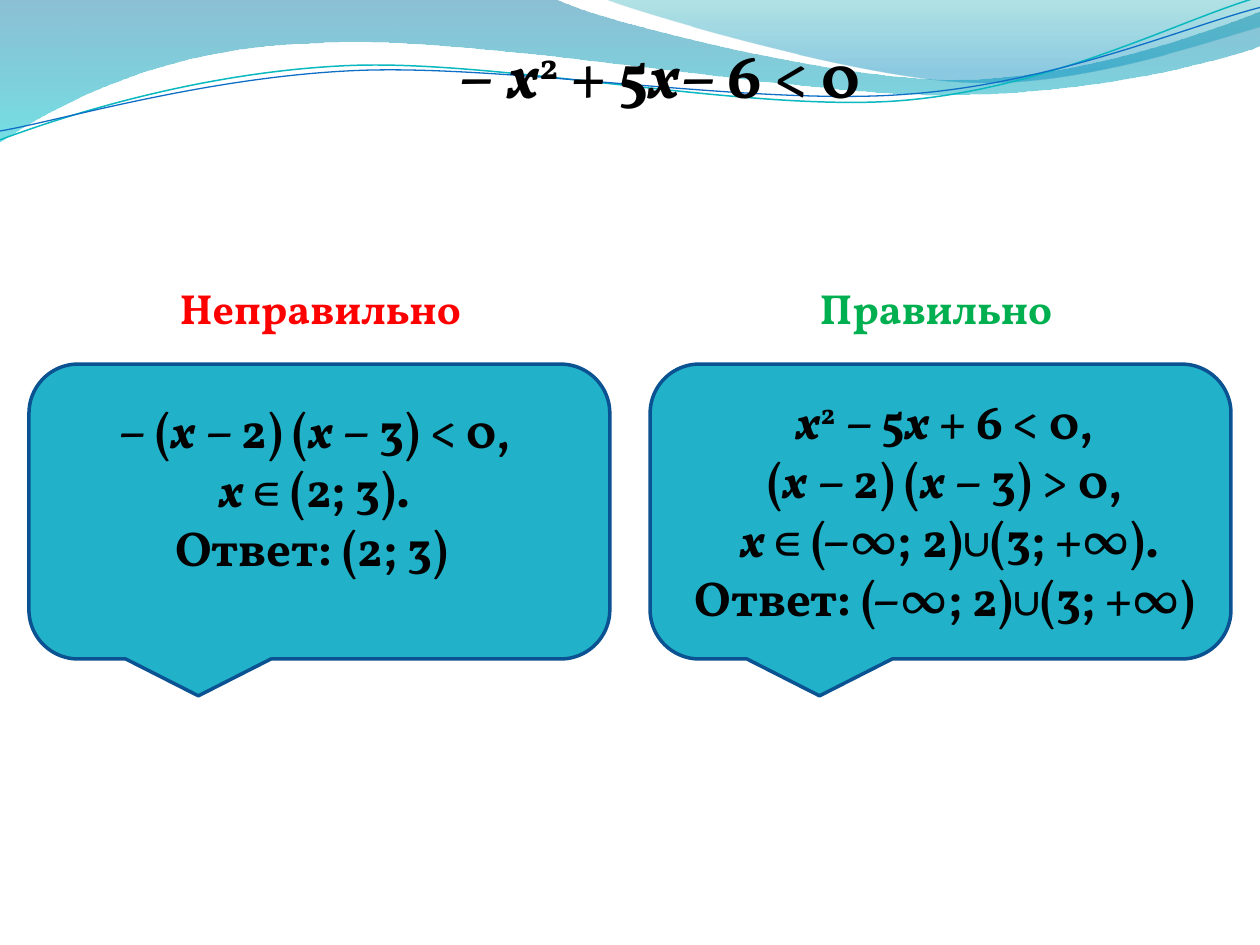
import math

from pptx import Presentation
from pptx import util as u
from pptx.dml.color import RGBColor
from pptx.enum import shapes, text
from pptx.oxml import parse_xml
from pptx.oxml.ns import nsdecls, qn

COLUMNS, ROWS = 10, 7.5
CELL = u.Inches(1)
FONT = "Vollkorn"
HARD_SPACE = chr(160)
STRAND_ANGLE = 357.3
BLACK = RGBColor(0x00, 0x00, 0x00)
RED = RGBColor(0xFF, 0x00, 0x00)
GREEN = RGBColor(0x00, 0xB0, 0x50)
CALLOUT_FILL = RGBColor(0x21, 0xB2, 0xC9)
CALLOUT_LINE = RGBColor(0x0B, 0x52, 0x92)
TEAL_LINE = RGBColor(0x0A, 0xB8, 0xBF)
BLUE_LINE = RGBColor(0x0F, 0x6F, 0xC6)
DEEP_BLUE = RGBColor(0x00, 0x74, 0xA1)
AQUA = RGBColor(0x00, 0xC6, 0xCF)
SEA_GREEN = RGBColor(0x00, 0xA1, 0xA9)
SKY_BLUE = RGBColor(0x00, 0x8B, 0xBF)

BANDS = [
    ([(0, 0), (4.4, -0.01),
      (4.76, 0.17, 6.64, 0.63, 7.58, 0.63), (8.53, 0.63, 9.58, 0.26, 10, 0.09),
      (10.01, 0.36),
      (9.83, 0.44, 8.7, 0.76, 7.46, 0.75), (6.22, 0.75, 3.82, 0.28, 2.57, 0.34),
      (1.29, 0.36, 0.46, 0.83, -0.01, 1.13), (0, 0)],
     [(0, DEEP_BLUE, 45), (1, AQUA, 55)]),
    ([(4.79, -0.01),
      (5.09, 0.11, 6.82, 0.62, 7.69, 0.65), (8.56, 0.69, 9.61, 0.32, 10, 0.21),
      (10, 0), (4.79, -0.01)],
     [(0, SEA_GREEN, 30), (0.8, SKY_BLUE, 45)]),
]
STRANDS = [
    ([(0, 1.11), (0.48, 0.93, 1.58, 0.57, 2.77, 0.52),
      (3.95, 0.47, 5.93, 0.89, 7.13, 0.8), (8.33, 0.71, 9.38, 0.15, 9.98, -0.02)],
     (4.99, 0.58), TEAL_LINE, 0.85),
    ([(0, 1.04), (0.47, 0.96, 1.64, 0.61, 2.83, 0.56),
      (4.03, 0.51, 5.97, 0.84, 7.17, 0.75), (8.36, 0.67, 9.41, 0.21, 10, 0.06)],
     (5, 0.59), BLUE_LINE, 0.75),
]
TITLE = "_–_|х|^2|_+ 5|x|– 6 < 0"
PANELS = [
    {"heading": "Неправильно", "color": RED, "heading_box": (1.33, 2.19, 2.47, 0.5),
     "callout_box": (0.23, 2.89, 4.61, 2.34), "solution_box": (0, 3.12, 5, 1.51),
     "solution": ["– (|x|_– 2) (|x|_– 3) < 0,", "х|_∈ (2; 3).", "Ответ:_(2; 3)|~_"]},
    {"heading": "Правильно", "color": GREEN, "heading_box": (1.41, 2.19, 2.07, 0.5),
     "callout_box": (0.16, 2.89, 4.61, 2.34), "solution_box": (0, 3.05, 5, 1.99),
     "solution": ["х|^2|_– 5|x|_+ 6 < 0,", "(|x|_– 2) (|x|_– 3) > 0,",
                  "_|х|_∈ (–∞; 2)∪(3; +∞).", "Ответ:_(–∞; 2)∪(3; +∞)"]},
]


def set_all(target, values):
    """Set each named attribute of the target."""
    for name, value in values.items():
        setattr(target, name, value)


def place(box, left, top, width, height):
    """Turn grid units within a box into slide lengths."""
    return [int(n * CELL) for n in (box[0] + left, box[1] + top, width, height)]


def turn(point, pivot, degrees):
    """Rotate a point clockwise about a pivot."""
    angle = math.radians(degrees)
    x, y = point[0] - pivot[0], point[1] - pivot[1]
    return (pivot[0] + x * math.cos(angle) - y * math.sin(angle),
            pivot[1] + x * math.sin(angle) + y * math.cos(angle))


def add_path(slide, box, segments, closed, pivot=(0, 0), angle=0):
    """Draw a freeform of lines and cubic curves in grid units."""
    pairs = [segment[i:i + 2] for segment in segments for i in range(0, len(segment), 2)]
    points = [((box[0] + x) * CELL, (box[1] + y) * CELL)
              for x, y in (turn(pair, pivot, -angle) for pair in pairs)]
    builder = slide.shapes.build_freeform(*points[0])
    builder.add_line_segments(points[1:], close=closed)
    shape = builder.convert_to_shape()
    lines = iter(list(shape._element.iter(qn("a:lnTo"))))
    for segment in segments[1:]:
        line = next(lines)
        if len(segment) == 6:
            curve = parse_xml(f'<a:cubicBezTo {nsdecls("a")}/>')
            line.addprevious(curve)
            for step in (line, next(lines), next(lines)):
                curve.append(step[0])
                step.getparent().remove(step)
    shape.rotation = angle
    shape.shadow.inherit = False
    return shape


def add_waves(slide, box):
    """Draw the translucent bands and thin strands at the top of the box."""
    for segments, stops in BANDS:
        band = add_path(slide, box, segments, True)
        band.line.fill.background()
        band.fill.gradient()
        band.fill.gradient_angle = 270
        for stop, (position, color, opacity) in zip(band.fill.gradient_stops, stops):
            stop.color.rgb = color
            stop.position = position
        colors = list(band._element.spPr.iter(qn("a:srgbClr")))
        for element, (position, color, opacity) in zip(colors, stops):
            element.append(parse_xml(
                f'<a:alpha {nsdecls("a")} val="{opacity * 1000}"/>'))
    for segments, pivot, color, width in STRANDS:
        strand = add_path(slide, box, segments, False, pivot, STRAND_ANGLE)
        strand.fill.background()
        strand.line.color.rgb = color
        strand.line.width = u.Pt(width)


def write(shape, lines, size, color, alignment, wrap):
    """Fill a shape with lines: italic variables, ^ for powers, ~ for small print."""
    frame = shape.text_frame
    set_all(frame, {"word_wrap": wrap, "vertical_anchor": text.MSO_ANCHOR.TOP,
                    "auto_size": text.MSO_AUTO_SIZE.SHAPE_TO_FIT_TEXT})
    for index, line in enumerate(lines):
        paragraph = frame.add_paragraph() if index else frame.paragraphs[0]
        paragraph.alignment = alignment
        for part in line.split("|"):
            small = part.startswith("~")
            run = paragraph.add_run()
            run.text = part.lstrip("^~").replace("_", HARD_SPACE)
            set_all(run.font, {"name": FONT, "size": u.Pt(18 if small else size),
                               "bold": not small, "italic": part in ("x", "х")})
            run.font.color.rgb = color
            if part.startswith("^"):
                run._r.get_or_add_rPr().set("baseline", "30000")


def add_title(slide, box):
    """Place the inequality as the slide title, above the waves."""
    title = slide.shapes.title
    left, top, width, height = place(box, 3.44, 0.23, 3.63, 0.71)
    set_all(title, {"left": left, "top": top, "width": width, "height": height})
    write(title, [TITLE], 36, BLACK, text.PP_ALIGN.LEFT, False)
    slide.shapes._spTree.append(title._element)


def add_callout(slide, box, panel):
    """Draw the speech callout of a panel."""
    callout = slide.shapes.add_shape(shapes.MSO_SHAPE.ROUNDED_RECTANGULAR_CALLOUT,
                                     *place(box, *panel["callout_box"]))
    callout.shadow.inherit = False
    callout.fill.solid()
    callout.fill.fore_color.rgb = CALLOUT_FILL
    callout.line.color.rgb = CALLOUT_LINE
    callout.line.width = u.Pt(2)


def add_panel(slide, box, panel):
    """Place a callout, its solution and its heading in the box."""
    add_callout(slide, box, panel)
    solution = slide.shapes.add_textbox(*place(box, *panel["solution_box"]))
    write(solution, panel["solution"], 28, BLACK, text.PP_ALIGN.CENTER, True)
    heading = slide.shapes.add_textbox(*place(box, *panel["heading_box"]))
    write(heading, [panel["heading"]], 24, panel["color"], text.PP_ALIGN.LEFT, False)


def main():
    """Build and save the presentation."""
    presentation = Presentation()
    set_all(presentation, {"slide_width": int(COLUMNS * CELL),
                           "slide_height": int(ROWS * CELL)})
    slide = presentation.slides.add_slide(presentation.slide_layouts[5])
    add_waves(slide, (0, 0))
    add_title(slide, (0, 0))
    for index, panel in enumerate(PANELS):
        add_panel(slide, (index * COLUMNS / len(PANELS), 0), panel)
    presentation.save("out.pptx")


if __name__ == "__main__":
    main()
